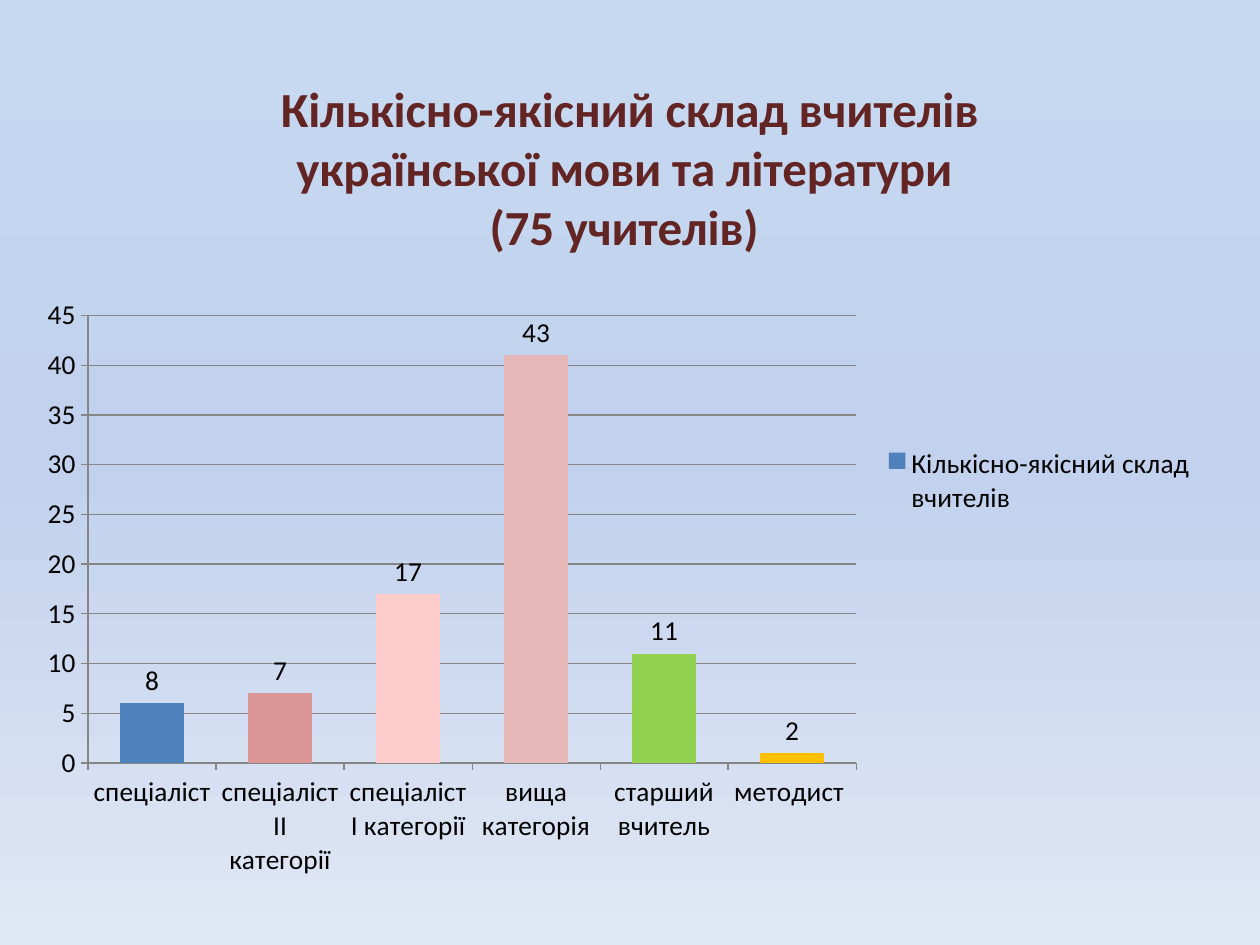
from copy import deepcopy

from lxml import etree
from pptx import Presentation
from pptx.chart import data
from pptx.dml import color
from pptx.enum import chart as chart_enum
from pptx.oxml import ns
from pptx.util import Inches, Pt

FONT = "Calibri"
SERIES_NAME = "Кількісно-якісний склад вчителів"
TITLE_LINES = [
    "Кількісно-якісний склад вчителів української мови та літератури ",
    "(75 учителів) ",
]
# category, value, bar colour, label written over the value
TEACHERS = [
    ("спеціаліст", 6, "4F81BD", "8"),
    ("спеціаліст ІІ категорії", 7, "D99694", None),
    ("спеціаліст І категорії", 17, "FFCCCC", "17"),
    ("вища категорія", 41, "E6B9B8", "43"),
    ("старший вчитель", 11, "92D050", None),
    ("методист ", 1, "FFC000", "2"),
]


def rgb(value):
    return color.RGBColor.from_string(value)


def fill_background(slide, colours):
    """Evenly spaced gradient stops from top to bottom."""
    fill = slide.background.fill
    fill.gradient()
    fill.gradient_angle = 270
    stop_list = fill._fill._gradFill.gsLst
    while len(stop_list) < len(colours):
        stop_list.append(deepcopy(stop_list[-1]))
    for index, (stop, colour) in enumerate(zip(fill.gradient_stops, colours)):
        stop.color.rgb = rgb(colour)
        stop.position = index / (len(colours) - 1)


def place(element, before, inner=False, **fractions):
    """Give a chart part a manual layout in fractions of the chart."""
    for old in element.findall(ns.qn("c:layout")):
        element.remove(old)
    layout = etree.Element(ns.qn("c:layout"))
    manual = etree.SubElement(layout, ns.qn("c:manualLayout"))
    settings = {"layoutTarget": "inner"} if inner else {}
    settings.update(xMode="edge", yMode="edge", **fractions)
    for name, value in settings.items():
        etree.SubElement(manual, ns.qn(f"c:{name}")).set("val", str(value))
    next(e for e in element if e.tag in map(ns.qn, before)).addprevious(layout)


def style_title(chart):
    frame = chart.chart_title.text_frame
    for index, line in enumerate(TITLE_LINES):
        paragraph = frame.paragraphs[0] if index == 0 else frame.add_paragraph()
        run = paragraph.add_run()
        run.text = line
        run.font.name, run.font.size, run.font.bold = FONT, Pt(28), True
        run.font.color.rgb = rgb("632523")
    chart.chart_title.include_in_layout = False
    place(chart.chart_title._element, ["c:overlay"], x=0.21, y=0.01)


def style_axes(chart):
    chart.value_axis.maximum_scale = 45
    chart.value_axis.minimum_scale = 0
    chart.value_axis.major_unit = 5
    chart.value_axis.has_major_gridlines = True
    lines = [chart.value_axis.major_gridlines.format.line]
    for axis in (chart.value_axis, chart.category_axis):
        axis.major_tick_mark = chart_enum.XL_TICK_MARK.OUTSIDE
        lines.append(axis.format.line)
    for line in lines:
        line.color.rgb = rgb("868686")
        line.width = Pt(0.75)


def style_bars(plot):
    plot.gap_width = 100
    plot.vary_by_categories = False
    series = plot.series[0]
    series.format.fill.solid()
    series.format.fill.fore_color.rgb = rgb(TEACHERS[0][2])
    series.data_labels.show_value = True
    series.data_labels.position = chart_enum.XL_LABEL_POSITION.OUTSIDE_END
    for index, (_, _, colour, label) in enumerate(TEACHERS):
        point = series.points[index]
        if index:
            point.format.fill.solid()
            point.format.fill.fore_color.rgb = rgb(colour)
        if label:
            run = point.data_label.text_frame.paragraphs[0].add_run()
            run.text = label
            run.font.name, run.font.size = FONT, Pt(15.6)
            point.data_label.position = chart_enum.XL_LABEL_POSITION.OUTSIDE_END


def add_teacher_chart(slide, left, top, width, height):
    chart_data = data.CategoryChartData()
    chart_data.categories = [teacher[0] for teacher in TEACHERS]
    chart_data.add_series(SERIES_NAME, [teacher[1] for teacher in TEACHERS])
    chart = slide.shapes.add_chart(
        chart_enum.XL_CHART_TYPE.COLUMN_CLUSTERED, left, top, width, height, chart_data
    ).chart
    chart.font.name, chart.font.size = FONT, Pt(15.6)
    chart.font.color.rgb = rgb("000000")
    style_title(chart)
    style_axes(chart)
    style_bars(chart.plots[0])
    chart.has_legend = True
    chart.legend.position = chart_enum.XL_LEGEND_POSITION.RIGHT
    chart.legend.include_in_layout = False
    place(chart.legend._element, ["c:overlay"], x=0.72, y=0.45, w=0.27, h=0.1)
    plot_area = chart._chartSpace.chart.plotArea
    place(plot_area, ["c:barChart"], inner=True, x=0.05, y=0.3, w=0.65, h=0.54)


def main():
    presentation = Presentation()
    presentation.slide_width, presentation.slide_height = Inches(10), Inches(7.5)
    slide = presentation.slides.add_slide(presentation.slide_layouts[6])
    fill_background(slide, ["C6D9F1", "C2D1ED", "E1E8F5"])
    add_teacher_chart(slide, Inches(0.23), Inches(0.53), Inches(9.38), Inches(6.58))
    presentation.save("out.pptx")


if __name__ == "__main__":
    main()
